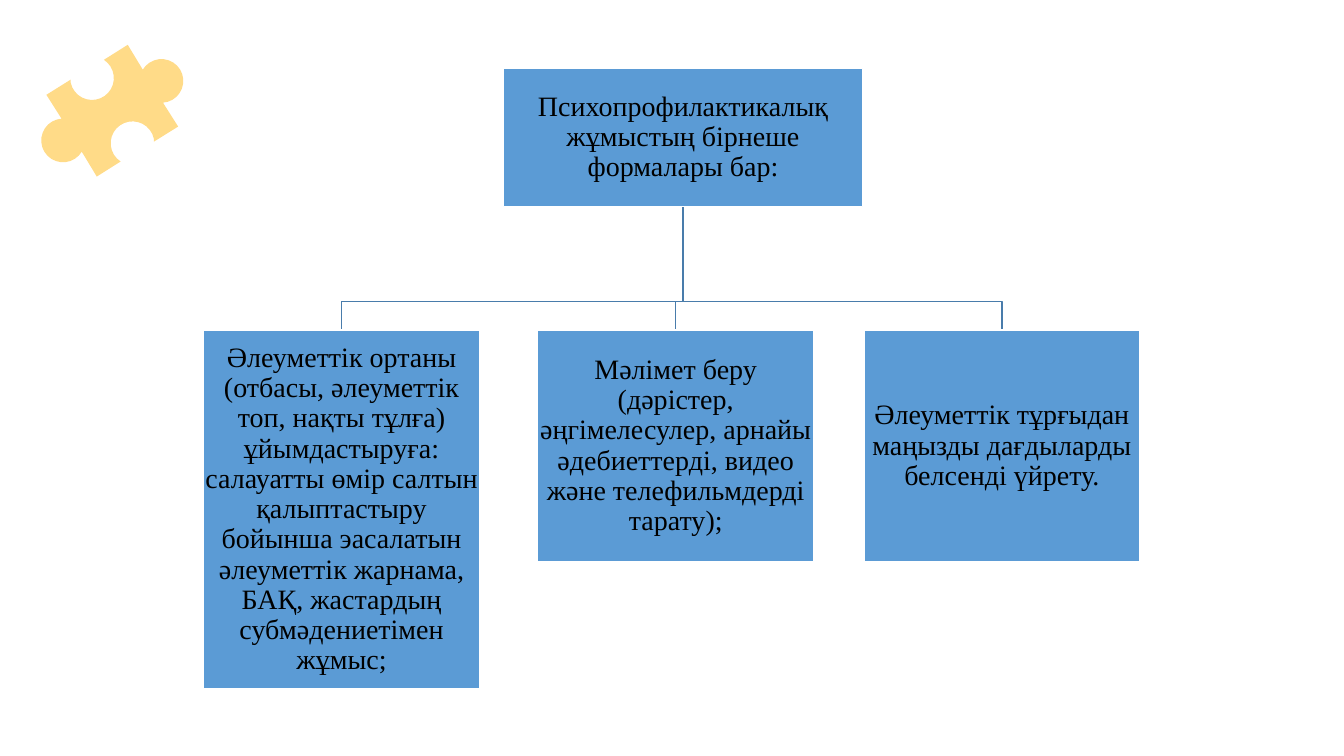
import math

import pptx
import pptx.dml.color
import pptx.enum.shapes
import pptx.enum.text
import pptx.util

Cm = pptx.util.Cm
Pt = pptx.util.Pt

COLORS = {"box": "5B9BD5", "edge": "FFFFFF", "line": "497CAB",
          "text": "000000", "puzzle": "FFDB88"}
FONT, FONT_SIZE = "Times New Roman", 20

# Lengths in cm
ROOT = ("Психопрофилактикалық жұмыстың бірнеше формалары бар:",
        12.69, 1.73, 9.05, 3.48)
FORM_TOP, FORM_WIDTH = 8.32, 6.96
FORMS = [  # text, left, height
    ("Әлеуметтік ортаны (отбасы, әлеуметтік топ, нақты тұлға) "
     "ұйымдастыруға: салауатты өмір салтын қалыптастыру бойынша эасалатын "
     "әлеуметтік жарнама, БАҚ, жастардың субмәдениетімен жұмыс;", 5.13, 9.04),
    ("Мәлімет беру (дәрістер, әңгімелесулер, арнайы әдебиеттерді, видео "
     "және телефильмдерді тарату);", 13.55, 5.84),
    ("Әлеуметтік тұрғыдан маңызды дағдыларды белсенді үйрету.", 21.77, 5.84),
]
BUS_Y = 7.6

PUZZLE_CENTER = (2.83, 2.79)
PUZZLE_CORNERS = [(2.44, 4.45), (1.17, 2.39), (1.78, 2.01)]
KNOB = (1.59, 3.54, 31, 266)  # centre, start and end angle
NOTCH = (2.32, 1.97, 167, -57)
ARC_RADIUS, ARC_STEPS = 0.55, 18


def rgb(name):
    return pptx.dml.color.RGBColor.from_string(COLORS[name])


def add_box(text, left, top, width, height):
    sp = slide.shapes.add_shape(pptx.enum.shapes.MSO_SHAPE.RECTANGLE,
                                Cm(left), Cm(top), Cm(width), Cm(height))
    sp.shadow.inherit = False
    sp.fill.solid()
    sp.fill.fore_color.rgb = rgb("box")
    sp.line.color.rgb = rgb("edge")
    sp.line.width = Pt(1)
    tf = sp.text_frame
    tf.word_wrap = True
    tf.vertical_anchor = pptx.enum.text.MSO_ANCHOR.MIDDLE
    tf.margin_left = tf.margin_right = Cm(0.02)
    tf.margin_top = tf.margin_bottom = Cm(0.02)
    tf.text = text
    p = tf.paragraphs[0]
    p.alignment = pptx.enum.text.PP_ALIGN.CENTER
    p.line_spacing = 0.9
    font = p.runs[0].font
    font.name, font.size = FONT, Pt(FONT_SIZE)
    font.color.rgb = rgb("text")


def add_outline(points, close):
    points = [(Cm(x), Cm(y)) for x, y in points]
    builder = slide.shapes.build_freeform(*points[0])
    builder.add_line_segments(points[1:], close=close)
    sp = builder.convert_to_shape()
    sp.shadow.inherit = False
    return sp


def add_branch(form_left):
    """Draw the bent line from the root box down to one form."""
    root_left, root_top, root_width, root_height = ROOT[1:]
    root_x = root_left + root_width / 2
    form_x = form_left + FORM_WIDTH / 2
    sp = add_outline([(root_x, root_top + root_height), (root_x, BUS_Y),
                      (form_x, BUS_Y), (form_x, FORM_TOP)], close=False)
    sp.fill.background()
    sp.line.color.rgb = rgb("line")
    sp.line.width = Pt(1)


def arc(cx, cy, start, end):
    angles = [math.radians(start + (end - start) * i / ARC_STEPS)
              for i in range(ARC_STEPS + 1)]
    return [(cx + ARC_RADIUS * math.cos(a), cy + ARC_RADIUS * math.sin(a))
            for a in angles]


def add_puzzle():
    """Draw one half of the piece and its half-turn about the centre."""
    cx, cy = PUZZLE_CENTER
    half = PUZZLE_CORNERS[:1] + arc(*KNOB) + PUZZLE_CORNERS[1:] + arc(*NOTCH)
    turned = [(2 * cx - x, 2 * cy - y) for x, y in half]
    sp = add_outline(half + turned, close=True)
    sp.fill.solid()
    sp.fill.fore_color.rgb = rgb("puzzle")
    sp.line.fill.background()


prs = pptx.Presentation()
prs.slide_width, prs.slide_height = Cm(33.87), Cm(19.05)
slide = prs.slides.add_slide(prs.slide_layouts[6])

for text, left, height in reversed(FORMS):
    add_branch(left)
add_box(*ROOT)
for text, left, height in FORMS:
    add_box(text, left, FORM_TOP, FORM_WIDTH, height)
add_puzzle()

prs.save("out.pptx")
